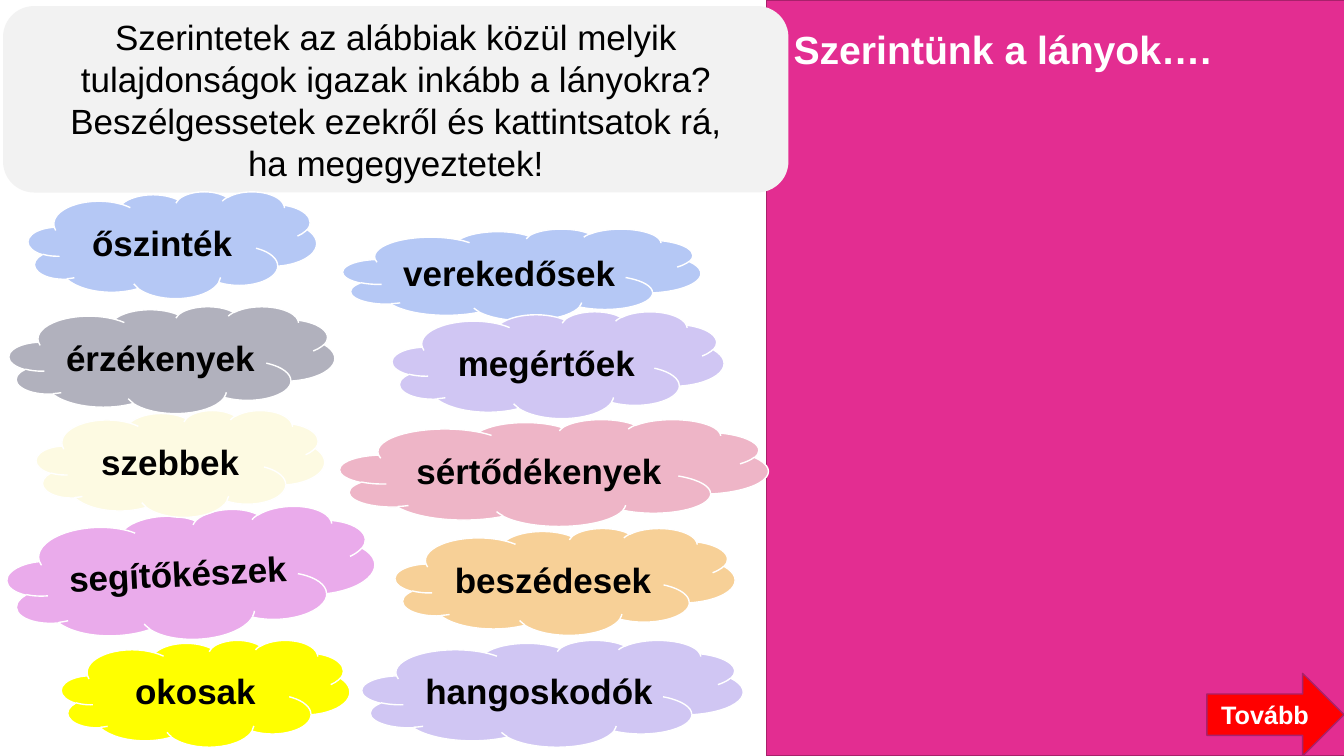
from dataclasses import dataclass

from pptx import Presentation
from pptx.dml.color import RGBColor
from pptx.enum.shapes import MSO_SHAPE
from pptx.enum.text import MSO_ANCHOR, MSO_AUTO_SIZE, PP_ALIGN
from pptx.shapes.autoshape import Shape
from pptx.util import Inches, Pt

RECT = MSO_SHAPE.RECTANGLE
ROUNDED = MSO_SHAPE.ROUNDED_RECTANGLE
CLOUD = MSO_SHAPE.CLOUD
ARROW = MSO_SHAPE.RIGHT_ARROW
CENTER, LEFT = PP_ALIGN.CENTER, PP_ALIGN.LEFT
MIDDLE, TOP = MSO_ANCHOR.MIDDLE, MSO_ANCHOR.TOP

BLACK = RGBColor(0x00, 0x00, 0x00)
WHITE = RGBColor(0xFF, 0xFF, 0xFF)
PINK = RGBColor(0xE3, 0x2D, 0x91)
DARK_PINK = RGBColor(0xA8, 0x21, 0x6B)
LIGHT_GRAY = RGBColor(0xF2, 0xF2, 0xF2)
RED = RGBColor(0xFF, 0x00, 0x00)
ORCHID = RGBColor(0xEA, 0xAB, 0xEB)
BLUE = RGBColor(0xB5, 0xC8, 0xF5)
LILAC = RGBColor(0xD0, 0xC6, 0xF3)
GRAY = RGBColor(0xB1, 0xB1, 0xBD)
CREAM = RGBColor(0xFD, 0xFA, 0xE2)
ORANGE = RGBColor(0xF7, 0xD0, 0x97)
ROSE = RGBColor(0xEE, 0xB5, 0xC7)
YELLOW = RGBColor(0xFF, 0xFF, 0x00)

FONT = "Arial"
QUESTION = (
    "Szerintetek az alábbiak közül melyik tulajdonságok igazak inkább "
    "a lányokra? Beszélgessetek ezekről és kattintsatok rá,\n"
    "ha megegyeztetek!"
)


@dataclass(frozen=True)
class Box:
    left: float
    top: float
    width: float
    height: float


@dataclass(frozen=True)
class Trait:
    text: str
    fill: RGBColor
    left: float
    top: float
    width: float
    height: float = 1.06
    rotation: float = 0

    @property
    def box(self) -> Box:
        return Box(self.left, self.top, self.width, self.height)


TRAITS = [
    Trait("segítőkészek", ORCHID, 0.07, 5.07, 3.65, 1.27, 357.1),
    Trait("őszinték", BLUE, 0.28, 1.9, 2.86),
    Trait("verekedősek", BLUE, 3.4, 2.27, 3.55, 0.91),
    Trait("hangoskodók", LILAC, 3.59, 6.35, 3.78),
    Trait("érzékenyek", GRAY, 0.09, 3.04, 3.23),
    Trait("szebbek", CREAM, 0.36, 4.07, 2.86),
    Trait("beszédesek", ORANGE, 3.92, 5.24, 3.37),
    Trait("sértődékenyek", ROSE, 3.37, 4.16, 4.25),
    Trait("okosak", YELLOW, 0.61, 6.35, 2.86),
    Trait("megértőek", LILAC, 3.89, 3.09, 3.29),
]


def write(sp: Shape, text: str, size: float, color: RGBColor,
          bold: bool = True, align: PP_ALIGN = CENTER,
          anchor: MSO_ANCHOR = MIDDLE) -> None:
    tf = sp.text_frame
    tf.word_wrap = True
    tf.vertical_anchor = anchor
    p = tf.paragraphs[0]
    p.text = text
    p.alignment = align
    for r in p.runs:
        r.font.name = FONT
        r.font.size = Pt(size)
        r.font.bold = bold
        r.font.color.rgb = color


def add_shape(slide, kind: MSO_SHAPE, box: Box, fill: RGBColor,
              line: RGBColor | None = None) -> Shape:
    sp = slide.shapes.add_shape(kind, Inches(box.left), Inches(box.top),
                                Inches(box.width), Inches(box.height))
    sp.shadow.inherit = False
    sp.fill.solid()
    sp.fill.fore_color.rgb = fill
    if line is None:
        sp.line.fill.background()
    else:
        sp.line.color.rgb = line
        sp.line.width = Pt(1)
    return sp


def place_title(slide) -> None:
    """Fill the title placeholder and lift it above the pink panel."""
    title = slide.shapes.title
    title.left, title.top = Inches(7.77), Inches(0.2)
    title.width, title.height = Inches(4.66), Inches(0.57)
    write(title, "Szerintünk a lányok….", 28, WHITE, align=LEFT, anchor=TOP)
    title.text_frame.auto_size = MSO_AUTO_SIZE.SHAPE_TO_FIT_TEXT
    slide.shapes.element.append(title.element)


def main() -> None:
    prs = Presentation()
    prs.slide_width, prs.slide_height = Inches(13.33), Inches(7.5)
    slide = prs.slides.add_slide(prs.slide_layouts.get_by_name("Title Only"))

    add_shape(slide, RECT, Box(7.6, 0, 5.79, 7.5), PINK, DARK_PINK)
    question = add_shape(slide, ROUNDED, Box(0.03, 0.06, 7.79, 1.85), LIGHT_GRAY)
    write(question, QUESTION, 25, BLACK, bold=False)
    place_title(slide)

    for trait in TRAITS:
        cloud = add_shape(slide, CLOUD, trait.box, trait.fill, WHITE)
        cloud.rotation = trait.rotation
        write(cloud, trait.text, 25, BLACK)

    button = add_shape(slide, ARROW, Box(11.97, 6.68, 1.36, 0.82), RED, DARK_PINK)
    write(button, "Tovább", 18, WHITE)

    prs.save("out.pptx")


if __name__ == "__main__":
    main()
